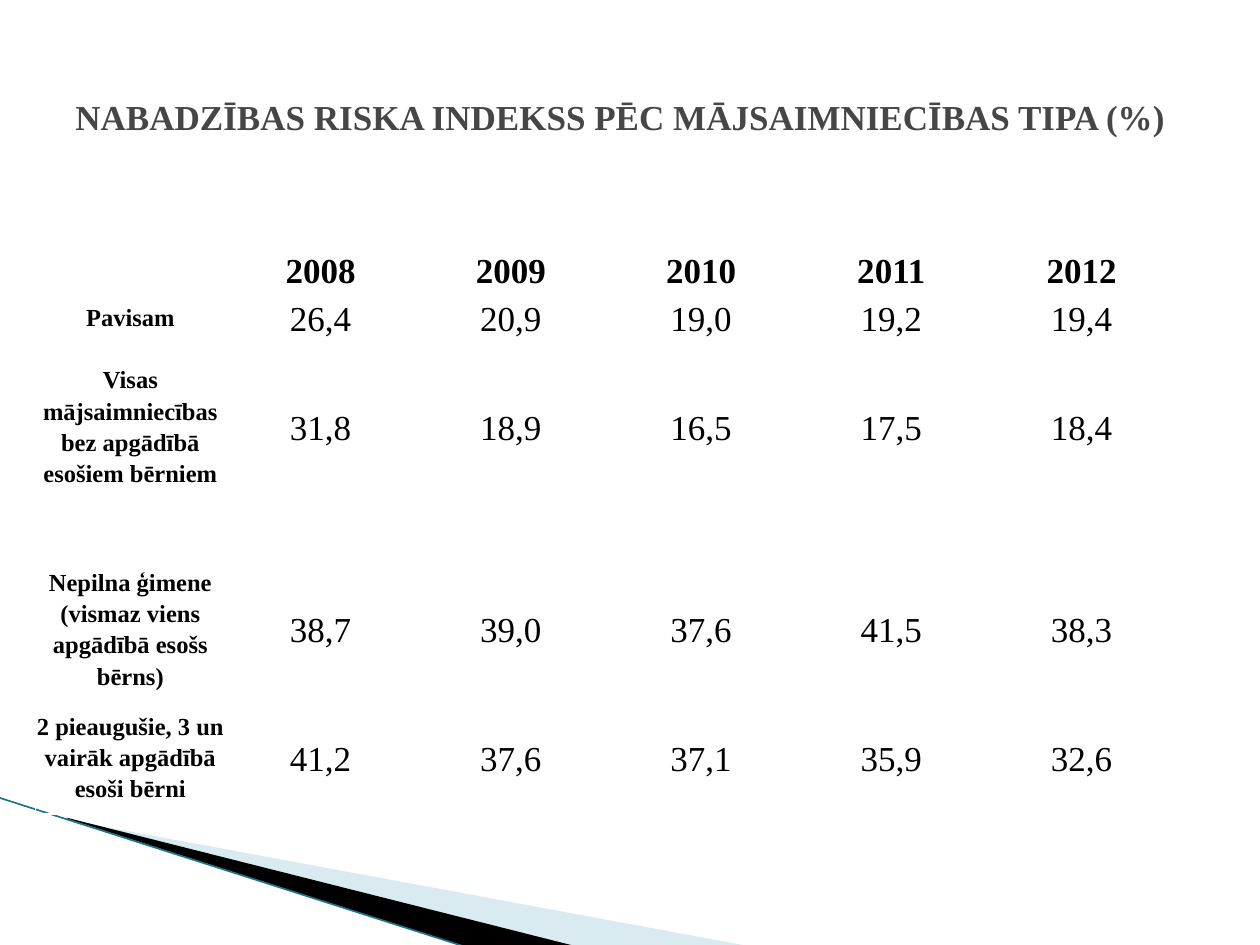
from dataclasses import dataclass

import pptx
import pptx.dml.color
import pptx.enum.shapes
import pptx.enum.text
import pptx.oxml.ns
import pptx.util
from lxml import etree
from pptx.util import Inches


@dataclass(frozen=True)
class Theme:
    font: str = "Times New Roman"
    title: str = "464646"
    text: str = "000000"
    pale: str = "A0CBDC"
    dark: str = "000000"
    edge: str = "1F7388"
    large: int = 20
    label: int = 14


THEME = Theme()

YEARS = ["2008", "2009", "2010", "2011", "2012"]
# Label, values and row height; None leaves a blank spacer row
ROWS = [
    ("", YEARS, 0.38),
    ("Pavisam", ["26,4", "20,9", "19,0", "19,2", "19,4"], 0.38),
    ("Visas mājsaimniecības bez apgādībā esošiem bērniem",
     ["31,8", "18,9", "16,5", "17,5", "18,4"], 1.35),
    (None, None, 0.37),
    ("Nepilna ģimene (vismaz viens apgādībā esošs bērns)",
     ["38,7", "39,0", "37,6", "41,5", "38,3"], 1.13),
    ("2 pieaugušie, 3 un vairāk apgādībā esoši bērni",
     ["41,2", "37,6", "37,1", "35,9", "32,6"], 0.91),
]


def rgb(value):
    return pptx.dml.color.RGBColor.from_string(value)


def write(tf, text, size=THEME.large, color=THEME.text, bold=False,
          align=pptx.enum.text.PP_ALIGN.LEFT, spacing=None):
    p = tf.paragraphs[0]
    p.alignment = align
    p.line_spacing = spacing
    r = p.add_run()
    r.text = text
    r.font.name = THEME.font
    r.font.size = pptx.util.Pt(size)
    r.font.bold = bold
    r.font.color.rgb = rgb(color)


def add_wedge(s, left, top, points, color, alpha=None):
    """Draw a filled polygon whose points are inches from left, top."""
    corners = [(Inches(left + x), Inches(top + y)) for x, y in points]
    fb = s.shapes.build_freeform(*corners[0], scale=1.0)
    fb.add_line_segments(corners[1:], close=True)
    sp = fb.convert_to_shape()
    sp.shadow.inherit = False
    sp.fill.solid()
    sp.fill.fore_color.rgb = rgb(color)
    sp.line.fill.background()
    if alpha is not None:
        clr = sp.fill._xPr.find(".//" + pptx.oxml.ns.qn("a:srgbClr"))
        etree.SubElement(clr, pptx.oxml.ns.qn("a:alpha"), val=str(alpha * 1000))


def add_corner(s, left, top):
    add_wedge(s, left, top,
              [(0.55, 0.18), (5.95, 1.18), (4.56, 1.18), (0.55, 0.17)],
              THEME.pale, alpha=40)
    add_wedge(s, left, top,
              [(0.53, 0.16), (4.57, 1.18), (3.72, 1.19), (0.54, 0.17)],
              THEME.dark)
    line = s.shapes.add_connector(
        pptx.enum.shapes.MSO_CONNECTOR.STRAIGHT, Inches(left - 0.01),
        Inches(top), Inches(left + 3.71), Inches(top + 1.19))
    line.line.color.rgb = rgb(THEME.edge)
    line.line.width = pptx.util.Pt(0.95)
    etree.SubElement(line._element.spPr, pptx.oxml.ns.qn("a:effectLst"))


def add_title(s, left, top, width, height):
    sp = s.shapes.add_textbox(Inches(left), Inches(top), Inches(width), Inches(height))
    tf = sp.text_frame
    tf.word_wrap = True
    tf.vertical_anchor = pptx.enum.text.MSO_ANCHOR.MIDDLE
    write(tf, "NABADZĪBAS RISKA INDEKSS PĒC MĀJSAIMNIECĪBAS TIPA (%)",
          color=THEME.title, bold=True)


def add_index_table(s, left, top, width):
    columns = len(YEARS) + 1
    height = sum(row[2] for row in ROWS)
    table = s.shapes.add_table(len(ROWS), columns, Inches(left), Inches(top),
                               Inches(width), Inches(height)).table
    table.first_row = False
    table.horz_banding = False
    for column in table.columns:
        column.width = Inches(width / columns)
    for i, (label, values, row_height) in enumerate(ROWS):
        table.rows[i].height = Inches(row_height)
        texts = [label, *values] if values else [""] * columns
        for j, text in enumerate(texts):
            cell = table.cell(i, j)
            cell.fill.background()
            cell.vertical_anchor = pptx.enum.text.MSO_ANCHOR.MIDDLE
            cell.margin_left = cell.margin_right = Inches(0.01)
            cell.margin_top = cell.margin_bottom = Inches(0.01)
            if text:
                write(cell.text_frame, text,
                      size=THEME.large if j else THEME.label,
                      bold=i == 0 or j == 0,
                      align=pptx.enum.text.PP_ALIGN.CENTER, spacing=1.15)


def main():
    prs = pptx.Presentation()
    prs.slide_width, prs.slide_height = Inches(10), Inches(7.5)
    s = prs.slides.add_slide(prs.slide_layouts[6])
    add_corner(s, 0, 6.33)
    add_index_table(s, 0.28, 1.94, 9.06)
    add_title(s, 0.5, 0.3, 9, 1.25)
    prs.save("out.pptx")


if __name__ == "__main__":
    main()
